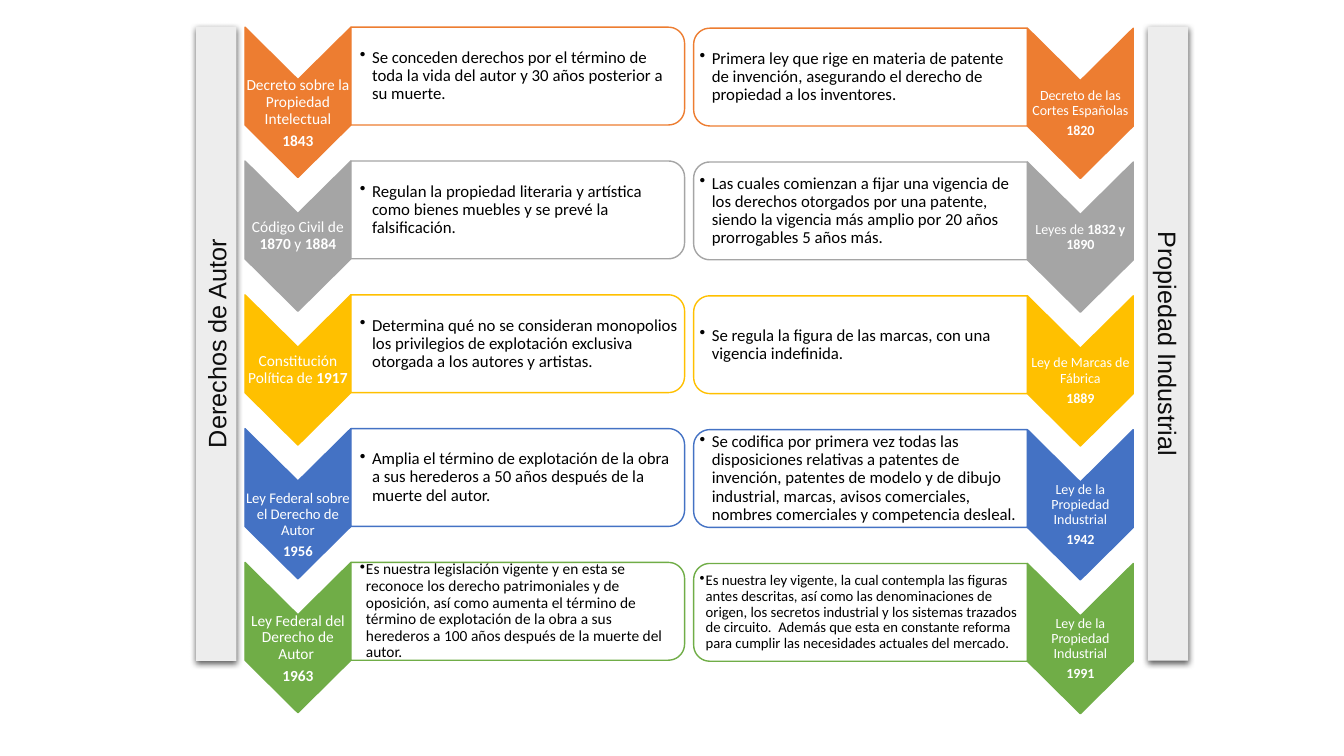
import math
import pptx
import pptx.dml.color
import pptx.enum.shapes
import pptx.enum.text
import pptx.oxml
import pptx.util
from pptx.util import Inches

RGBColor = pptx.dml.color.RGBColor
WHITE = RGBColor(0xFF, 0xFF, 0xFF)
BLACK = RGBColor(0, 0, 0)
BAR_FILL = RGBColor(0xED, 0xED, 0xED)
BAR_TEXT = RGBColor(0x0D, 0x0D, 0x0D)
ROW_COLORS = [
    RGBColor(0xED, 0x7D, 0x31),
    RGBColor(0xA5, 0xA5, 0xA5),
    RGBColor(0xFF, 0xC0, 0x00),
    RGBColor(0x44, 0x72, 0xC4),
    RGBColor(0x70, 0xAD, 0x47),
]

# label paragraphs, label size, label drop, description, description size, indent
AUTHOR_ROWS = [
    ([["Decreto sobre la Propiedad Intelectual"], ["1843"]], 11, 0.11,
     "Se conceden derechos por el término de toda la vida del autor y 30 años posterior a su muerte.", 12, 0.12),
    ([["Código Civil de ", "1870 ", "y ", "1884"]], 11, 0,
     "Regulan la propiedad literaria y artística como bienes muebles y se prevé la falsificación.", 12, 0.12),
    ([["Constitución Política de ", "1917"]], 11, 0,
     "Determina qué no se consideran monopolios los privilegios de explotación exclusiva otorgada a los autores y artistas.", 12, 0.12),
    ([["Ley Federal sobre el Derecho de Autor"], ["1956"]], 10.5, 0.21,
     "Amplia el término de explotación de la obra a sus herederos a 50 años después de la muerte del autor.", 12, 0.12),
    ([["Ley Federal del Derecho de Autor "], ["1963"]], 11, 0.11,
     "Es nuestra legislación vigente y en esta se reconoce los derecho patrimoniales y de oposición, así como aumenta el término de término de explotación de la obra a sus herederos a 100 años después de la muerte del autor.", 11, 0.06),
]
INDUSTRY_ROWS = [
    ([["Decreto de las Cortes Españolas"], ["1820"]], 10, 0.1,
     "Primera ley que rige en materia de patente de invención, asegurando el derecho de propiedad a los inventores.", 12, 0.12),
    ([["Leyes de ", "1832 y 1890"]], 10, 0,
     "Las cuales comienzan a fijar una vigencia de los derechos otorgados por una patente, siendo la vigencia más amplio por 20 años prorrogables 5 años más.", 12, 0.12),
    ([["Ley de Marcas de Fábrica"], ["1889"]], 10, 0.1,
     "Se regula la figura de las marcas, con una vigencia indefinida.", 12, 0.12),
    ([["Ley de la Propiedad Industrial"], ["1942"]], 10, 0.1,
     "Se codifica por primera vez todas las disposiciones relativas a patentes de invención, patentes de modelo y de dibujo industrial, marcas, avisos comerciales, nombres comerciales y competencia desleal.", 12, 0.12),
    ([["Ley de la Propiedad Industrial"], ["1991"]], 10, 0.1,
     "Es nuestra ley vigente, la cual contempla las figuras antes descritas, así como las denominaciones de origen, los secretos industrial y los sistemas trazados de circuito.  Además que esta en constante reforma para cumplir las necesidades actuales del mercado.", 10.5, 0.06),
]
# rows, first top, chevron left, box square side, box round side, box insets
COLUMNS = [
    (AUTHOR_ROWS, 0.27, 2.43, 3.48, 6.79, (0.09, 0.06, 0.06, 0.06)),
    (INDUSTRY_ROWS, 0.28, 10.19, 10.19, 6.88, (0.06, 0.06, 0.09, 0.06)),
]
BARS = [("Derechos de Autor", -1, 270), ("Propiedad Industrial", 8.44, 90)]
ROW_STEP = 5.31 / 4
CHEVRON_WIDTH, CHEVRON_HEIGHT, CHEVRON_NOTCH = 1.05, 1.49, 0.52
BOX_HEIGHT, CORNER = 0.97, 0.16
DRAWING = 'xmlns:a="http://schemas.openxmlformats.org/drawingml/2006/main"'


def write_text(shape, paragraphs, size, color, font="Calibri", insets=(0.1, 0.05, 0.1, 0.05),
               centered=True, spacing=None, after=0, indent=None):
    frame = shape.text_frame
    frame.word_wrap = True
    frame.vertical_anchor = pptx.enum.text.MSO_ANCHOR.MIDDLE
    frame.margin_left, frame.margin_top, frame.margin_right, frame.margin_bottom = map(Inches, insets)
    for index, spans in enumerate(paragraphs):
        para = frame.add_paragraph() if index else frame.paragraphs[0]
        para.alignment = pptx.enum.text.PP_ALIGN.CENTER if centered else pptx.enum.text.PP_ALIGN.LEFT
        para.line_spacing = spacing
        para.space_after = pptx.util.Pt(after)
        if indent:
            properties = para._p.get_or_add_pPr()
            properties.set("marL", str(Inches(indent)))
            properties.set("indent", str(-Inches(indent)))
            properties.append(pptx.oxml.parse_xml(f'<a:buChar {DRAWING} char="•"/>'))
        for text in spans:
            span = para.add_run()
            span.text = text
            span.font.name = font
            span.font.size = pptx.util.Pt(size)
            span.font.color.rgb = color
            span.font.bold = centered and text[0].isdigit()


def draw_outline(page, points, fill, line):
    corners = [(Inches(x), Inches(y)) for x, y in points]
    builder = page.shapes.build_freeform(*corners[0])
    builder.add_line_segments(corners[1:], close=True)
    shape = builder.convert_to_shape()
    shape.shadow.inherit = False
    shape.fill.solid()
    shape.fill.fore_color.rgb = fill
    shape.line.color.rgb = line
    shape.line.width = pptx.util.Pt(1)
    return shape


def chevron_points(left, top):
    right, middle = left + CHEVRON_WIDTH, left + CHEVRON_WIDTH / 2
    shoulder = top + CHEVRON_HEIGHT - CHEVRON_NOTCH
    return [(right, top), (right, shoulder), (middle, top + CHEVRON_HEIGHT),
            (left, shoulder), (left, top), (middle, top + CHEVRON_NOTCH)]


def box_points(square_side, round_side, top):
    inward = math.copysign(CORNER, square_side - round_side)
    arc = [(round_side + inward * (1 - math.sin(angle)), CORNER * (1 - math.cos(angle)))
           for angle in (math.radians(step * 9) for step in range(11))]
    upper = [(x, top + y) for x, y in arc]
    lower = [(x, top + BOX_HEIGHT - y) for x, y in reversed(arc)]
    return [(square_side, top)] + upper + lower + [(square_side, top + BOX_HEIGHT)]


def main():
    deck = pptx.Presentation()
    deck.slide_width, deck.slide_height = Inches(13.33), Inches(7.5)
    page = deck.slides.add_slide(deck.slide_layouts[6])

    for rows, first_top, chevron_left, square_side, round_side, insets in COLUMNS:
        for index, (label, label_size, drop, description, size, indent) in enumerate(rows):
            top = first_top + index * ROW_STEP
            color = ROW_COLORS[index]
            chevron = draw_outline(page, chevron_points(chevron_left, top), color, color)
            write_text(chevron, label, label_size, WHITE, spacing=0.9, after=0.35 * label_size,
                       insets=(0.01, 0.53 + drop, 0.01, 0.53 - drop))
            box = draw_outline(page, box_points(square_side, round_side, top), WHITE, color)
            box.fill._xPr.find(".//{*}srgbClr").append(
                pptx.oxml.parse_xml(f'<a:alpha {DRAWING} val="90000"/>'))
            write_text(box, [[description]], size, BLACK, insets=insets, centered=False,
                       spacing=0.9, indent=indent)

    for title, left, rotation in BARS:
        bar = page.shapes.add_shape(pptx.enum.shapes.MSO_SHAPE.RECTANGLE,
                                    Inches(left), Inches(3.21), Inches(6.29), Inches(0.4))
        bar.rotation = rotation
        bar.fill.solid()
        bar.fill.fore_color.rgb = BAR_FILL
        bar.line.fill.background()
        bar.shadow.inherit = False
        bar._element.spPr.find("{*}effectLst").append(pptx.oxml.parse_xml(
            f'<a:outerShdw {DRAWING} blurRad="57150" dist="19050" dir="5400000" algn="ctr" rotWithShape="0">'
            '<a:srgbClr val="000000"><a:alpha val="63000"/></a:srgbClr></a:outerShdw>'))
        write_text(bar, [[title]], 18, BAR_TEXT, font="Arial")
        bar.text_frame.auto_size = pptx.enum.text.MSO_AUTO_SIZE.SHAPE_TO_FIT_TEXT

    deck.save("out.pptx")


if __name__ == "__main__":
    main()
